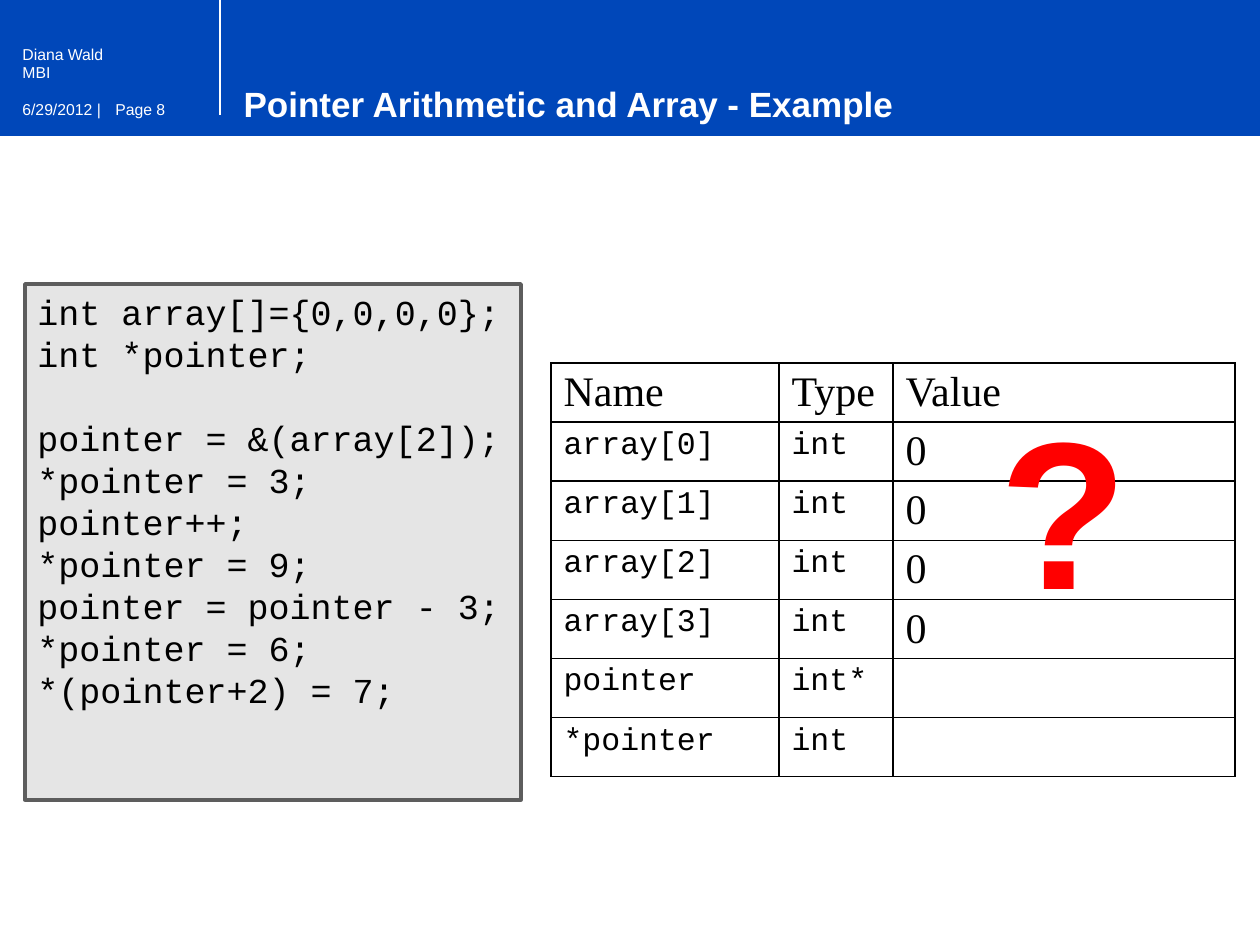
from pptx import Presentation
from pptx.dml.color import RGBColor
from pptx.enum.shapes import MSO_CONNECTOR, MSO_SHAPE
from pptx.enum.text import MSO_ANCHOR, PP_ALIGN
from pptx.oxml.ns import qn
from pptx.util import Emu, Pt
from lxml import etree

RECTANGLE = MSO_SHAPE.RECTANGLE
STRAIGHT = MSO_CONNECTOR.STRAIGHT
TOP, MIDDLE = MSO_ANCHOR.TOP, MSO_ANCHOR.MIDDLE
LEFT = PP_ALIGN.LEFT

WHITE = RGBColor(0xFF, 0xFF, 0xFF)
BLACK = RGBColor(0, 0, 0)
BLUE = RGBColor(0x00, 0x47, 0xB9)
PALE_BLUE = RGBColor(0xCC, 0xDB, 0xF1)
LIGHT_GREY = RGBColor(0xE5, 0xE5, 0xE5)
DARK_GREY = RGBColor(0x5D, 0x5D, 0x5D)
RED = RGBColor(0xFF, 0, 0)

SANS, MONO, SERIF = "Arial", "Courier New", "Times New Roman"
PX = 914400 / 126


def px(length):
    return Emu(round(length * PX))


class SlideBuilder:
    def __init__(self, presentation):
        self.slide = presentation.slides.add_slide(presentation.slide_layouts[5])
        self.shapes = self.slide.shapes
        background = self.slide.background.fill
        background.solid()
        background.fore_color.rgb = PALE_BLUE

    def style(self, paragraph, size, font, color, bold=False):
        paragraph.alignment = LEFT
        paragraph.font.size = Pt(size)
        paragraph.font.name = font
        paragraph.font.color.rgb = color
        paragraph.font.bold = bold

    def box(self, left, top, width, height, fill, line=None):
        box = self.shapes.add_shape(RECTANGLE, px(left), px(top), px(width), px(height))
        box.shadow.inherit = False
        box.fill.solid()
        box.fill.fore_color.rgb = fill
        if line is None:
            box.line.fill.background()
        else:
            box.line.color.rgb = line
            box.line.width = Pt(2)
        return box

    def line(self, x1, y1, x2, y2, color, width):
        line = self.shapes.add_connector(STRAIGHT, px(x1), px(y1), px(x2), px(y2))
        line.line.color.rgb = color
        line.line.width = Pt(width)
        etree.SubElement(line._element.spPr, qn("a:effectLst"))

    def title(self, text, left, top, width, height):
        title = self.shapes.title
        title.left, title.top = px(left), px(top)
        title.width, title.height = px(width), px(height)
        title.text_frame.text = text
        title.text_frame.vertical_anchor = MIDDLE
        self.style(title.text_frame.paragraphs[0], 20, SANS, WHITE, True)
        self.shapes._spTree.append(title._element)

    def text(self, text, left, top, width, height, size, color, bold=False):
        frame = self.shapes.add_textbox(px(left), px(top), px(width), px(height)).text_frame
        frame.word_wrap = True
        frame.text = text
        self.style(frame.paragraphs[0], size, SANS, color, bold)

    def code(self, blocks, left, top, width, height):
        frame = self.box(left, top, width, height, LIGHT_GREY, DARK_GREY).text_frame
        frame.vertical_anchor = TOP
        frame.word_wrap = True
        frame.text = "\n".join(line for block in blocks for line in block)
        for paragraph in frame.paragraphs:
            self.style(paragraph, 20, MONO, BLACK)
            paragraph.line_spacing = Pt(24)
        for index in range(1, len(blocks)):
            first = sum(len(block) for block in blocks[:index])
            frame.paragraphs[first].space_before = Pt(24)

    def cell_borders(self, cell):
        properties = cell._tc.get_or_add_tcPr()
        for index, side in enumerate(("a:lnL", "a:lnR", "a:lnT", "a:lnB")):
            border = etree.Element(qn(side), w=str(Pt(1)))
            fill = etree.SubElement(border, qn("a:solidFill"))
            etree.SubElement(fill, qn("a:srgbClr"), val=str(BLACK))
            properties.insert(index, border)

    def table(self, rows, left, top, widths, row_height):
        table = self.shapes.add_table(
            len(rows), len(widths), px(left), px(top),
            px(sum(widths)), px(row_height * len(rows))).table
        table.first_row = False
        table.horz_banding = False
        for column, width in zip(table.columns, widths):
            column.width = px(width)
        for r, values in enumerate(rows):
            table.rows[r].height = px(row_height)
            for c, value in enumerate(values):
                cell = table.cell(r, c)
                cell.text = value
                cell.fill.background()
                self.cell_borders(cell)
                is_code = r > 0 and c < 2
                size, font = (18, MONO) if is_code else (24, SERIF)
                self.style(cell.text_frame.paragraphs[0], size, font, BLACK)


def main():
    presentation = Presentation()
    presentation.slide_width, presentation.slide_height = px(1260), px(945)
    builder = SlideBuilder(presentation)

    builder.box(0, 136, 1260, 809, WHITE)
    builder.box(0, 0, 1260, 136, BLUE)
    builder.line(220, 115, 220, 0, WHITE, 0.9)
    for label, left, top, width in (
        ("Page 8", 103, 94, 127),
        ("6/29/2012 |", 10, 94, 116),
        ("Diana Wald", 10, 39, 236),
        ("MBI", 10, 57, 168),
    ):
        builder.text(label, left, top, width, 32, 9, WHITE)
    builder.title("Pointer Arithmetic and Array - Example", 231, 76, 777, 54)

    declarations = ["int array[]={0,0,0,0};", "int *pointer;"]
    statements = [
        "pointer = &(array[2]);",
        "*pointer = 3;",
        "pointer++;",
        "*pointer = 9;",
        "pointer = pointer - 3;",
        "*pointer = 6;",
        "*(pointer+2) = 7;",
    ]
    builder.code([declarations, statements], 25, 284, 496, 516)

    variables = [("Name", "Type", "Value")]
    variables += [(f"array[{i}]", "int", "0") for i in range(4)]
    variables += [("pointer", "int*", ""), ("*pointer", "int", "")]
    builder.table(variables, 551, 363, (228, 114, 342), 59)
    builder.text("?", 987, 373, 159, 267, 120, RED, True)

    presentation.save("out.pptx")


if __name__ == "__main__":
    main()
